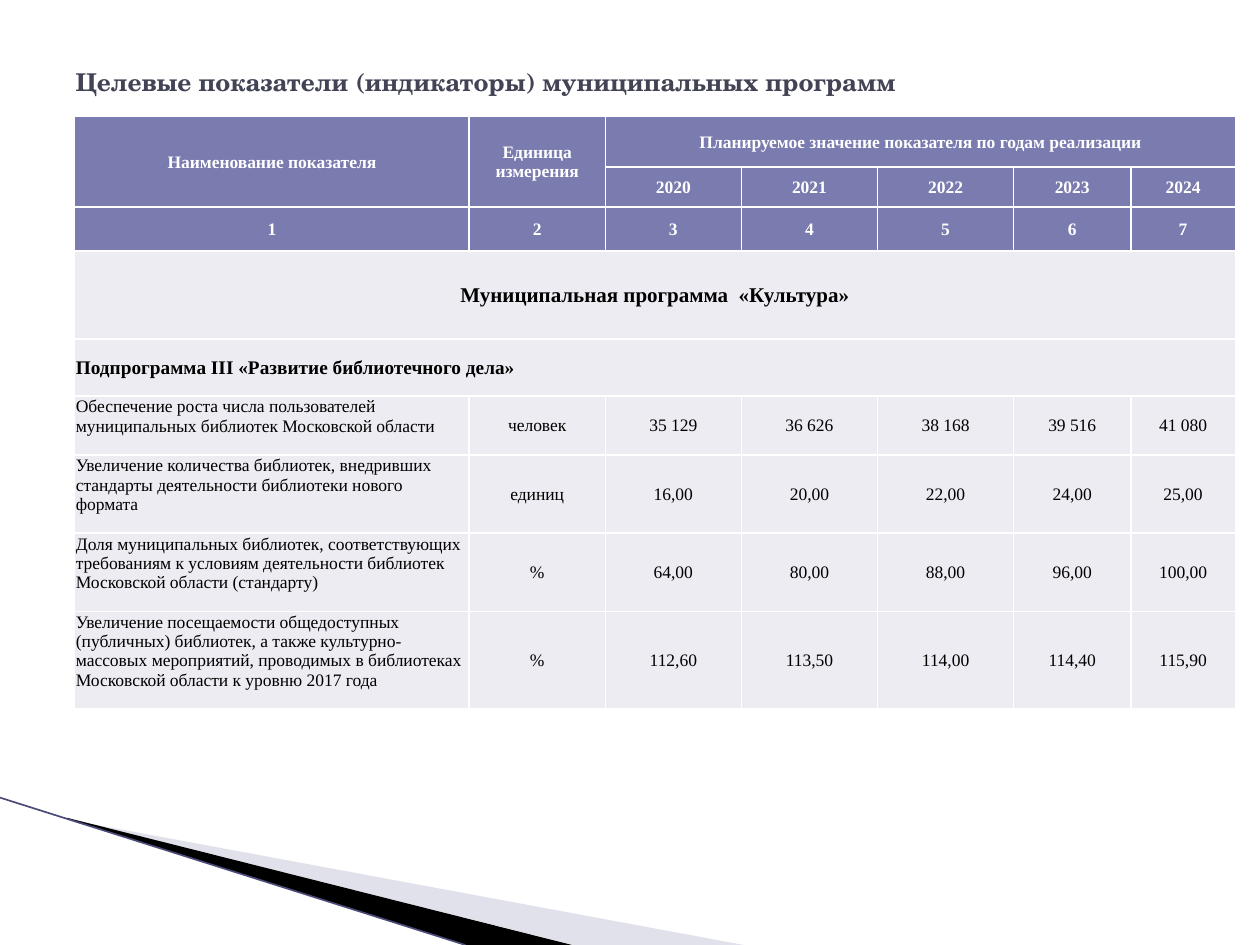
from dataclasses import dataclass
from typing import Any

from lxml.etree import SubElement
from pptx import Presentation
from pptx.dml.color import RGBColor
from pptx.enum.shapes import MSO_CONNECTOR as Connector
from pptx.enum.text import MSO_ANCHOR as Anchor, PP_ALIGN as Align
from pptx.oxml import parse_xml
from pptx.oxml.ns import nsdecls, qn
from pptx.util import Pt

COLUMNS = [225.4, 77.8, 77.8, 77.8, 77.8, 67, 59.7]
ROWS = [29.2, 22.9, 25.1, 50.3, 32.4, 33.8, 44.7, 44.9, 55.5]
YEARS = ["2020", "2021", "2022", "2023", "2024"]
INDICATORS = [
    ["Обеспечение роста числа пользователей муниципальных библиотек Московской области",
     "человек", "35 129", "36 626", "38 168", "39 516", "41 080"],
    ["Увеличение количества библиотек, внедривших стандарты деятельности библиотеки нового формата",
     "единиц", "16,00", "20,00", "22,00", "24,00", "25,00"],
    ["Доля муниципальных библиотек, соответствующих требованиям к условиям деятельности "
     "библиотек Московской области (стандарту)",
     "%", "64,00", "80,00", "88,00", "96,00", "100,00"],
    ["Увеличение посещаемости общедоступных (публичных) библиотек, а также культурно-массовых "
     "мероприятий, проводимых в библиотеках Московской области к уровню 2017 года",
     "%", "112,60", "113,50", "114,00", "114,40", "115,90"],
]


def paint(target, color):
    target.rgb = RGBColor.from_string(color)


@dataclass
class SlideBuilder:
    """Holds the style and the current slide and adds each kind of element."""

    page: Any
    title_font: str = "TeX Gyre Schola"
    table_font: str = "Times New Roman"
    title_color: str = "424456"
    head_fill: str = "7A7BAE"
    body_fill: str = "ECECF2"
    border: str = "FFFFFF"

    def add_text(self, frame, text, font, size, color, bold, align):
        para = frame.paragraphs[0]
        para.alignment = align
        span = para.add_run()
        span.text = text
        span.font.name = font
        span.font.size = Pt(size)
        span.font.bold = bold
        paint(span.font.color, color)

    def title(self, text, left, top, width, height):
        box = self.page.shapes.title
        box.left, box.top, box.width, box.height = map(Pt, (left, top, width, height))
        box.text_frame.word_wrap = True
        box.text_frame.vertical_anchor = Anchor.MIDDLE
        self.add_text(box.text_frame, text, self.title_font, 14, self.title_color, True, Align.LEFT)

    def wedge(self, points, color, opacity=100):
        start, *rest = [(Pt(x), Pt(y)) for x, y in points]
        builder = self.page.shapes.build_freeform(*start)
        builder.add_line_segments(rest, close=True)
        shape = builder.convert_to_shape()
        shape.shadow.inherit = False
        shape.fill.solid()
        paint(shape.fill.fore_color, color)
        shape.line.fill.background()
        if opacity < 100:
            fill = shape._element.spPr.find(qn("a:solidFill"))
            SubElement(fill[0], qn("a:alpha"), val=str(opacity * 1000))

    def line(self, start, end, color, width):
        line = self.page.shapes.add_connector(Connector.STRAIGHT, *map(Pt, start + end))
        paint(line.line.color, color)
        line.line.width = Pt(width)
        SubElement(line._element.spPr, qn("a:effectLst"))

    def table(self, left, top):
        frame = self.page.shapes.add_table(
            len(ROWS), len(COLUMNS), Pt(left), Pt(top), Pt(sum(COLUMNS)), Pt(sum(ROWS)))
        table = frame.table
        table.first_row = table.horz_banding = False
        for column, width in zip(table.columns, COLUMNS):
            column.width = Pt(width)
        for row, height in zip(table.rows, ROWS):
            row.height = Pt(height)
        for index, row in enumerate(table.rows):
            for cell in row.cells:
                self.frame_cell(cell, self.head_fill if index < 3 else self.body_fill)
        return table

    def frame_cell(self, cell, color):
        properties = cell._tc.get_or_add_tcPr()
        for index, side in enumerate("LRTB"):
            properties.insert(index, parse_xml(
                f'<a:ln{side} {nsdecls("a")} w="12700"><a:solidFill>'
                f'<a:srgbClr val="{self.border}"/></a:solidFill></a:ln{side}>'))
        cell.fill.solid()
        paint(cell.fill.fore_color, color)
        cell.margin_left = cell.margin_right = cell.margin_top = Pt(0.7)
        cell.margin_bottom = Pt(0)
        cell.vertical_anchor = Anchor.MIDDLE

    def cell(self, cell, text, size=10, color="000000", bold=False, align=Align.CENTER):
        self.add_text(cell.text_frame, text, self.table_font, size, color, bold, align)

    def head(self, cell, text):
        self.cell(cell, text, color="FFFFFF", bold=True)


def main():
    deck = Presentation()
    deck.slide_width, deck.slide_height = Pt(720), Pt(540)
    slide = SlideBuilder(deck.slides.add_slide(deck.slide_layouts[5]))

    slide.wedge([(39.6, 468.5), (425, 540), (328, 540), (39.6, 468)], "B6B6D1", 40)
    slide.wedge([(38.2, 467.3), (327, 540), (266, 540), (38.9, 468)], "000000")
    slide.line((0, 455.8), (266, 540), "4B4B78", 0.95)
    slide.title("Целевые показатели (индикаторы) муниципальных программ", 36, 21.6, 648, 49.7)

    table = slide.table(42.7, 66.3)
    for column, text in enumerate(["Наименование показателя", "Единица измерения"]):
        table.cell(0, column).merge(table.cell(1, column))
        slide.head(table.cell(0, column), text)
    table.cell(0, 2).merge(table.cell(0, 6))
    slide.head(table.cell(0, 2), "Планируемое значение показателя по годам реализации")
    for column, year in enumerate(YEARS, 2):
        slide.head(table.cell(1, column), year)
    for column in range(len(COLUMNS)):
        slide.head(table.cell(2, column), str(column + 1))

    sections = [("Муниципальная программа  «Культура»", 12, Align.CENTER),
                ("Подпрограмма III «Развитие библиотечного дела»", 11, Align.LEFT)]
    for row, (text, size, align) in enumerate(sections, 3):
        table.cell(row, 0).merge(table.cell(row, 6))
        slide.cell(table.cell(row, 0), text, size, bold=True, align=align)

    for row, (name, *values) in enumerate(INDICATORS, 5):
        slide.cell(table.cell(row, 0), name, align=Align.LEFT)
        table.cell(row, 0).margin_bottom = Pt(10.8)
        for column, value in enumerate(values, 1):
            slide.cell(table.cell(row, column), value)

    deck.save("out.pptx")


if __name__ == "__main__":
    main()
